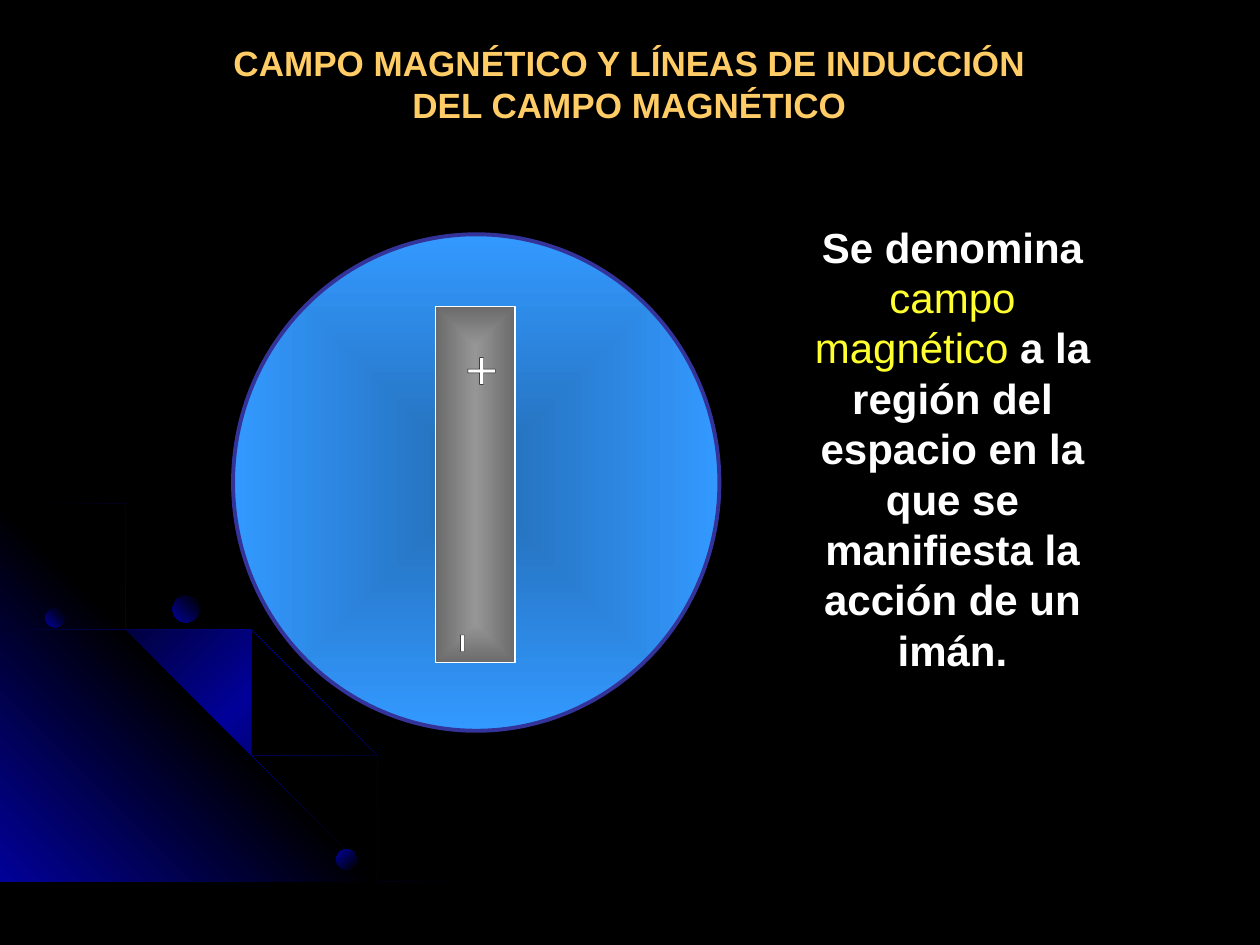
from dataclasses import dataclass

from lxml import etree
from pptx import Presentation
from pptx.dml.color import RGBColor
from pptx.enum.shapes import MSO_SHAPE
from pptx.enum.text import MSO_ANCHOR, PP_ALIGN
from pptx.oxml.ns import qn
from pptx.util import Inches, Pt

OVAL, RECT = MSO_SHAPE.OVAL, MSO_SHAPE.RECTANGLE
TOP, MIDDLE = MSO_ANCHOR.TOP, MSO_ANCHOR.MIDDLE
CENTER = PP_ALIGN.CENTER


@dataclass(frozen=True)
class Theme:
    """Colours, fonts and type sizes of the slide."""
    black: str = "000000"
    white: str = "FFFFFF"
    navy: str = "010199"
    gold: str = "FFCC66"
    yellow: str = "FFFF2F"
    field: tuple = ("246DB6", "3399FF")
    field_line: str = "333399"
    magnet: tuple = ("969696", "6B6B6B")
    font: str = "Arial"
    pole_font: str = "Montserrat"
    title: int = 20
    body: int = 24
    pole: int = 36


T = Theme()

ORBITS = (
    ((0, 4.35), (0.28, 4.41), (0.57, 4.47), (0.98, 4.59), (1.36, 4.77),
     (1.74, 4.97), (2.09, 5.21), (2.42, 5.48), (2.72, 5.78), (3, 6.11),
     (3.25, 6.48), (3.39, 6.73), (3.52, 6.98), (3.62, 7.23), (3.72, 7.49)),
    ((0, 4.75), (0.41, 4.88), (0.79, 5.05), (1.17, 5.26), (1.52, 5.49),
     (1.84, 5.76), (2.15, 6.06), (2.42, 6.4), (2.66, 6.76), (2.86, 7.12),
     (2.96, 7.3), (3.03, 7.49)),
    ((0, 4.42), (0.39, 4.55), (0.76, 4.73), (1.11, 4.93), (1.44, 5.16),
     (1.75, 5.43), (2.04, 5.73), (2.29, 6.03), (2.54, 6.39), (2.69, 6.65),
     (2.82, 6.93), (2.94, 7.2), (3.03, 7.49)),
)
PLANETS = ((0.36, 4.83, 0.15, 315), (2.67, 6.74, 0.16, 45), (1.37, 4.73, 0.21, 315))


def gradient(sp, colors, angle=None):
    """Fill a shape with evenly spaced colours, linear or from its centre."""
    sp.fill.background()
    old = sp._element.spPr.find(qn("a:noFill"))
    grad = etree.Element(qn("a:gradFill"), rotWithShape="1")
    stops = etree.SubElement(grad, qn("a:gsLst"))
    for i, color in enumerate(colors):
        gs = etree.SubElement(stops, qn("a:gs"), pos=str(100000 * i // (len(colors) - 1)))
        etree.SubElement(gs, qn("a:srgbClr"), val=color)
    if angle is None:
        shade = etree.SubElement(grad, qn("a:path"), path="rect")
        etree.SubElement(shade, qn("a:fillToRect"), l="50000", t="50000", r="50000", b="50000")
    else:
        etree.SubElement(grad, qn("a:lin"), ang=str(angle * 60000), scaled="1")
    old.getparent().replace(old, grad)


def finish(sp, colors, angle=None, line=None, width=0):
    """Give a shape its gradient and outline, without a shadow."""
    sp.shadow.inherit = False
    gradient(sp, colors, angle)
    if line:
        sp.line.color.rgb = RGBColor.from_string(line)
        sp.line.width = Pt(width)
    else:
        sp.line.fill.background()


def shape(s, kind, box, colors, **look):
    """Add a preset shape in a box given in inches."""
    finish(s.shapes.add_shape(kind, *map(Inches, box)), colors, **look)


def outline(s, points, colors, angle):
    """Add a closed freeform through points given in inches."""
    fb = s.shapes.build_freeform(*points[0], scale=Inches(1))
    fb.add_line_segments(points[1:], close=True)
    finish(fb.convert_to_shape(), colors, angle)


def write(sp, runs, size, font=T.font, bold=True, anchor=TOP, wrap=True, edge=None):
    """Write centred runs of (text, colour, bold) into a shape."""
    tf = sp.text_frame
    tf.word_wrap, tf.vertical_anchor = wrap, anchor
    p = tf.paragraphs[0]
    p.alignment = CENTER
    for text, color, *weight in runs:
        r = p.add_run()
        r.text = text
        r.font.name, r.font.size = font, Pt(size)
        r.font.bold = weight[0] if weight else bold
        r.font.color.rgb = RGBColor.from_string(color)
        if edge:
            ln = etree.Element(qn("a:ln"), w=str(Pt(0.75)))
            fill = etree.SubElement(ln, qn("a:solidFill"))
            etree.SubElement(fill, qn("a:srgbClr"), val=edge)
            r._r.get_or_add_rPr().insert(0, ln)


def text_box(s, box, runs, size, **look):
    """Add a text box in a box given in inches."""
    sp = s.shapes.add_textbox(*map(Inches, box))
    write(sp, runs, size, **look)
    return sp


def ribbon(points, width=0.02):
    """Return a thin band whose offset turns from down to left along the curve."""
    last = len(points) - 1
    inner = [(x - width * i / last, y + width * (1 - i / last))
             for i, (x, y) in enumerate(points)]
    return list(points) + inner[::-1]


def corner(s, left, bottom, size):
    """Draw the glowing corner with its orbits and planets."""
    glow = (T.black, T.navy, T.black)
    wedge = [(left + size, bottom), (left, bottom), (left, bottom - size)]
    outline(s, ribbon(ORBITS[0]), glow, 45)
    outline(s, wedge, (T.navy, T.black, T.navy), 315)
    for orbit in ORBITS[1:]:
        outline(s, ribbon(orbit), glow, 45)
    for x, y, d, angle in PLANETS:
        shape(s, OVAL, (x, y, d, d), (T.navy, T.black), angle=angle)


def heading(s, box):
    """Place and format the title placeholder."""
    sp = s.shapes.title
    sp.left, sp.top, sp.width, sp.height = map(Inches, box)
    write(sp, [("CAMPO MAGNÉTICO Y LÍNEAS DE INDUCCIÓN DEL CAMPO MAGNÉTICO", T.gold)], T.title)


def definition(s, box):
    """Write the definition of the magnetic field."""
    text_box(s, box, [
        ("Se denomina ", T.white),
        ("campo magnético", T.yellow, False),
        (" a la región del espacio en la que se manifiesta la acción de un imán.", T.white),
    ], T.body, anchor=MIDDLE)


def magnet(s, x, y, w, h):
    """Draw the field disc and the bar magnet with its two poles."""
    shape(s, OVAL, (x, y, w, h), T.field, line=T.field_line, width=2.25)
    bar = (x + 0.417 * w, y + 0.145 * h, 0.163 * w, 0.718 * h)
    shape(s, RECT, bar, T.magnet, line=T.white, width=0.75)
    look = dict(font=T.pole_font, bold=False, wrap=False, edge=T.black)
    text_box(s, (x + 1.73, y + 0.71, 0.33, 0.39), [("+", T.white)], T.pole, **look)
    sp = text_box(s, (x + 1.84, y + 3.04, 0.09, 0.31), [("-", T.white)], T.pole, **look)
    sp.rotation = 90
    sp.text_frame._txBody.bodyPr.set("vert", "wordArtVert")


def main():
    """Build and save the slide."""
    prs = Presentation()
    prs.slide_width, prs.slide_height = Inches(10), Inches(7.5)
    s = prs.slides.add_slide(prs.slide_layouts[5])
    s.background.fill.solid()
    s.background.fill.fore_color.rgb = RGBColor.from_string(T.black)
    corner(s, 0, 7.49, 3.22)
    heading(s, (1.69, 0.28, 6.61, 0.77))
    definition(s, (6.18, 1.71, 2.76, 3.69))
    magnet(s, 1.85, 1.86, 3.86, 3.94)
    prs.save("out.pptx")


if __name__ == "__main__":
    main()
